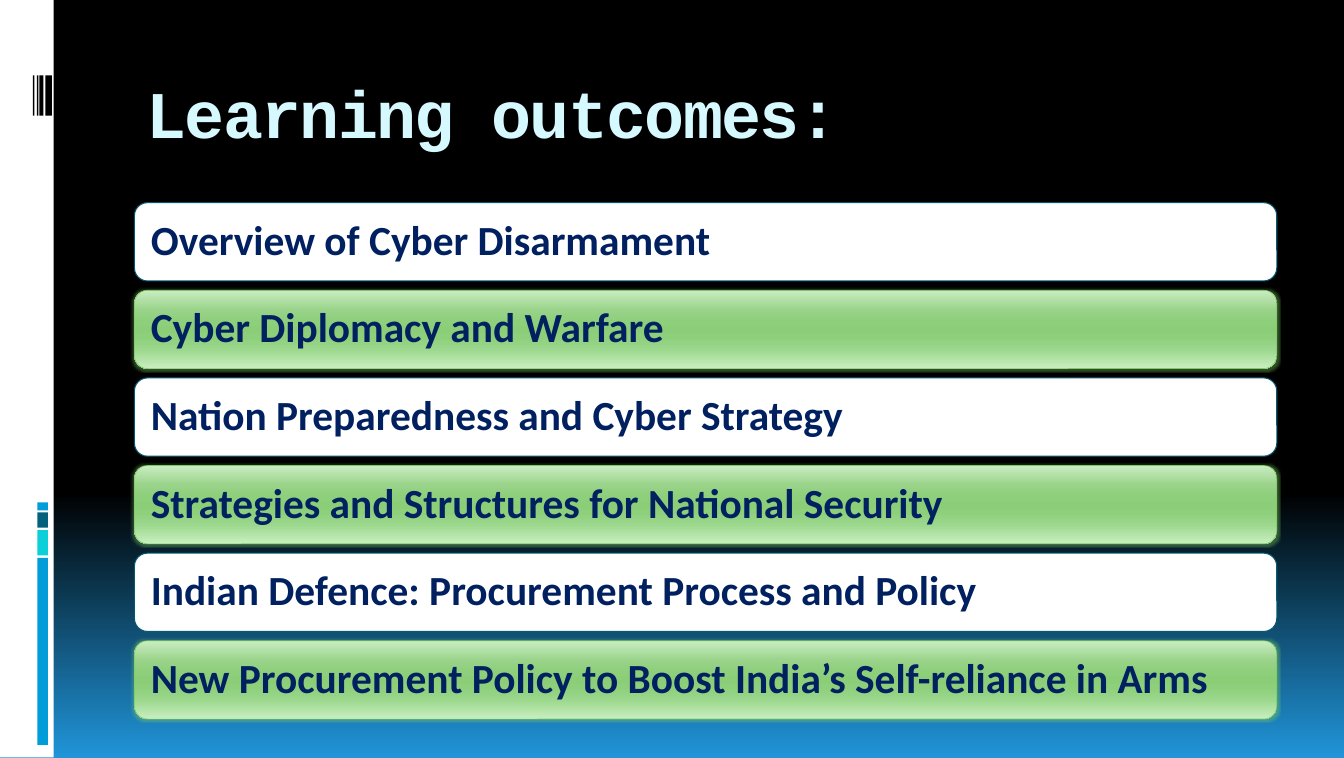
from lxml import etree
from pptx import Presentation
from pptx.dml.color import RGBColor
from pptx.enum import shapes, text
from pptx.oxml.ns import qn
from pptx.util import Inches, Pt

WHITE = RGBColor(0xFF, 0xFF, 0xFF)
BLACK = RGBColor(0, 0, 0)
BLUE = RGBColor(0x00, 0x9D, 0xD9)
AQUA = RGBColor(0x0B, 0xD0, 0xD9)
TEAL = RGBColor(0x04, 0x61, 0x7B)
EDGE = RGBColor(0x04, 0x58, 0x70)
GREEN = RGBColor(0x7C, 0xCA, 0x62)
NAVY = RGBColor(0x00, 0x20, 0x60)
ICE = RGBColor(0xD5, 0xF9, 0xFF)
SKY = RGBColor(0x20, 0x95, 0xD9)

NIGHT = [(0, BLACK), (65, BLACK), (100, SKY)]
LEAF = [
    (0, RGBColor(0xCA, 0xED, 0xC2)),
    (25, RGBColor(0x9A, 0xD3, 0x8A)),
    (40, RGBColor(0x8D, 0xCF, 0x7A)),
    (50, RGBColor(0x8B, 0xCE, 0x77)),
    (60, RGBColor(0x8D, 0xCF, 0x7A)),
    (75, RGBColor(0x9B, 0xD7, 0x8C)),
    (100, RGBColor(0xC9, 0xEF, 0xC0)),
]


def grade(fill, root, stops):
    fill.gradient()
    fill.gradient_angle = 270
    ramp = root.find(".//" + qn("a:gsLst"))
    for old in list(ramp):
        ramp.remove(old)
    for spot, tint in stops:
        stop = etree.SubElement(ramp, qn("a:gs"), pos=str(spot * 1000))
        etree.SubElement(stop, qn("a:srgbClr"), val=str(tint))


def block(kind, *box):
    shape = slide.shapes.add_shape(kind, *map(Inches, box))
    shape.shadow.inherit = False
    return shape


deck = Presentation()
deck.slide_width, deck.slide_height = Inches(26.6), Inches(15)
slide = deck.slides.add_slide(deck.slide_layouts[5])
grade(slide.background.fill, slide._element, NIGHT)

STRIPS = [
    (0, 0, 1.06, 14.99, WHITE),
    (0.74, 11.04, 0.21, 3.7, BLUE),
    (0.74, 10.49, 0.21, 0.5, AQUA),
    (0.74, 10.14, 0.21, 0.3, TEAL),
    (0.74, 9.94, 0.21, 0.16, BLUE),
    (0.9, 1.49, 0.13, 0.8, BLACK),
    (0.78, 1.49, 0.08, 0.8, BLACK),
    (0.73, 1.49, 0.03, 0.8, BLACK),
    (0.65, 1.49, 0.03, 0.8, BLACK),
]
for *box, tint in STRIPS:
    strip = block(shapes.MSO_SHAPE.RECTANGLE, *box)
    strip.fill.solid()
    strip.fill.fore_color.rgb = tint
    strip.line.fill.background()

LEFT, WIDTH = 2.66, 22.61
title = slide.shapes.title
spot = {"left": LEFT, "top": 1.12, "width": WIDTH, "height": 2}
for name, size in spot.items():
    setattr(title, name, Inches(size))
title.text = "Learning outcomes:"
frame = title.text_frame
look = {
    "margin_left": Inches(0.24),
    "margin_right": Inches(0.24),
    "margin_top": Inches(0.12),
    "margin_bottom": Inches(0.12),
    "vertical_anchor": text.MSO_ANCHOR.BOTTOM,
    "auto_size": text.MSO_AUTO_SIZE.NONE,
    "word_wrap": True,
}
for name, value in look.items():
    setattr(frame, name, value)
head = frame.paragraphs[0]
head.alignment = text.PP_ALIGN.LEFT
run = head.runs[0]
for name, value in {"name": "Courier New", "size": Pt(95), "bold": True}.items():
    setattr(run.font, name, value)
run.font.color.rgb = ICE
run._r.get_or_add_rPr().set("spc", "-240")

TOPICS = [
    "Overview of Cyber Disarmament",
    "Cyber Diplomacy and Warfare",
    "Nation Preparedness and Cyber Strategy",
    "Strategies and Structures for National Security",
    "Indian Defence: Procurement Process and Policy",
    "New Procurement Policy to Boost India’s Self-reliance in Arms",
]
TOP, STEP, HIGH = 4.01, 1.734, 1.55
inset = dict.fromkeys(
    ["margin_left", "margin_right", "margin_top", "margin_bottom"], Inches(0.25)
)
look = {**inset, "vertical_anchor": text.MSO_ANCHOR.MIDDLE, "word_wrap": True}
for row, topic in enumerate(TOPICS):
    bar = block(
        shapes.MSO_SHAPE.ROUNDED_RECTANGLE, LEFT, TOP + row * STEP, WIDTH, HIGH
    )
    if row % 2:
        grade(bar.fill, bar._element, LEAF)
        bar.line.color.rgb = GREEN
        bar.line.width = Pt(0.94)
        effect = bar._element.spPr.find(qn("a:effectLst"))
        glow = etree.SubElement(effect, qn("a:glow"), rad=str(Pt(5)))
        tint = etree.SubElement(glow, qn("a:srgbClr"), val=str(GREEN))
        etree.SubElement(tint, qn("a:alpha"), val="40000")
    else:
        bar.fill.solid()
        bar.fill.fore_color.rgb = WHITE
        bar.line.color.rgb = EDGE
        bar.line.width = Pt(1.5)
    frame = bar.text_frame
    for name, value in look.items():
        setattr(frame, name, value)
    line = frame.paragraphs[0]
    line.text = topic
    line.alignment = text.PP_ALIGN.LEFT
    line.line_spacing = 0.9
    for name, value in {"name": "Calibri", "size": Pt(59), "bold": True}.items():
        setattr(line.font, name, value)
    line.font.color.rgb = NAVY

deck.save("out.pptx")
